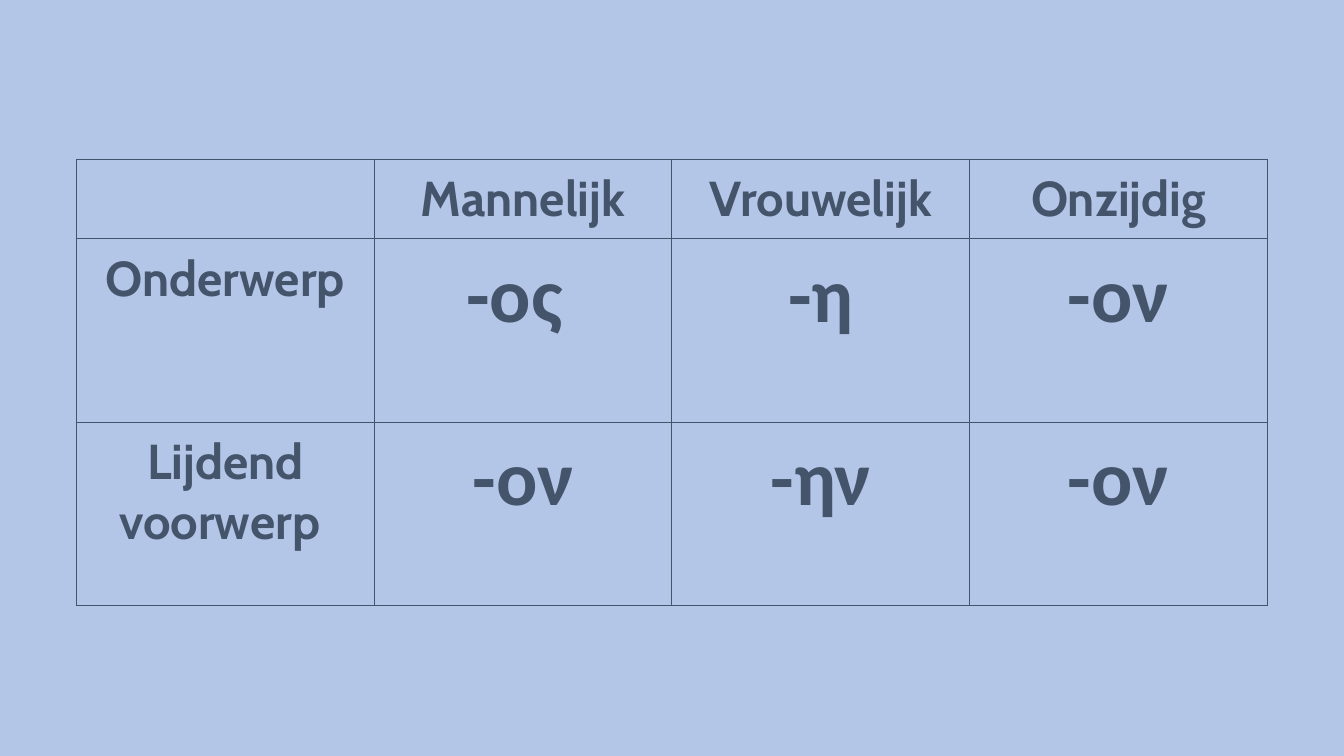
from lxml import etree
from pptx import Presentation
from pptx.dml.color import RGBColor
from pptx.enum.text import PP_ALIGN
from pptx.oxml.ns import qn
from pptx.util import Pt

CENTER = PP_ALIGN.CENTER
BACKGROUND = "B3C6E7"
INK = "44546A"
LABEL_FONT = ("Cabin", 35)
ENDING_FONT = ("Calibri", 55)
BORDER_SIDES = ("a:lnL", "a:lnR", "a:lnT", "a:lnB")
ROW_HEIGHTS = (57, 131, 131)
ENDINGS = (
    ("", "Mannelijk", "Vrouwelijk", "Onzijdig"),
    ("Onderwerp", "-ος ", "-η", "-ον"),
    ("Lijdend voorwerp ", "-ον", "-ην", "-ον"),
)


def color(hex_value):
    return RGBColor.from_string(hex_value)


def draw_borders(cell):
    properties = cell._tc.get_or_add_tcPr()
    for position, side in enumerate(BORDER_SIDES):
        border = etree.Element(qn(side), w=str(int(Pt(0.75))))
        fill = etree.SubElement(border, qn("a:solidFill"))
        etree.SubElement(fill, qn("a:srgbClr"), val=INK)
        properties.insert(position, border)


def fill_cell(cell, wording, font):
    cell.margin_left = cell.margin_right = Pt(7.2)
    cell.margin_top = cell.margin_bottom = Pt(7.2)
    cell.fill.background()
    draw_borders(cell)
    paragraph = cell.text_frame.paragraphs[0]
    paragraph.alignment = CENTER
    if wording:
        run = paragraph.add_run()
        run.text = wording
        run.font.name, size = font
        run.font.size = Pt(size)
        run.font.bold = True
        run.font.color.rgb = color(INK)


def add_endings_table(slide, left, top, width):
    column_count = len(ENDINGS[0])
    frame = slide.shapes.add_table(
        len(ENDINGS), column_count,
        Pt(left), Pt(top), Pt(width), Pt(sum(ROW_HEIGHTS)),
    )
    table = frame.table
    table.horz_banding = False
    table.first_row = False
    for column in table.columns:
        column.width = Pt(width / column_count)
    for row_index, (height, wordings) in enumerate(zip(ROW_HEIGHTS, ENDINGS)):
        table.rows[row_index].height = Pt(height)
        for column_index, wording in enumerate(wordings):
            is_label = row_index == 0 or column_index == 0
            font = LABEL_FONT if is_label else ENDING_FONT
            fill_cell(table.cell(row_index, column_index), wording, font)


def main():
    presentation = Presentation()
    presentation.slide_width = Pt(960)
    presentation.slide_height = Pt(540)
    slide = presentation.slides.add_slide(presentation.slide_layouts[6])
    slide.background.fill.solid()
    slide.background.fill.fore_color.rgb = color(BACKGROUND)
    add_endings_table(slide, left=54.6, top=113.6, width=850.8)
    presentation.save("out.pptx")


if __name__ == "__main__":
    main()
